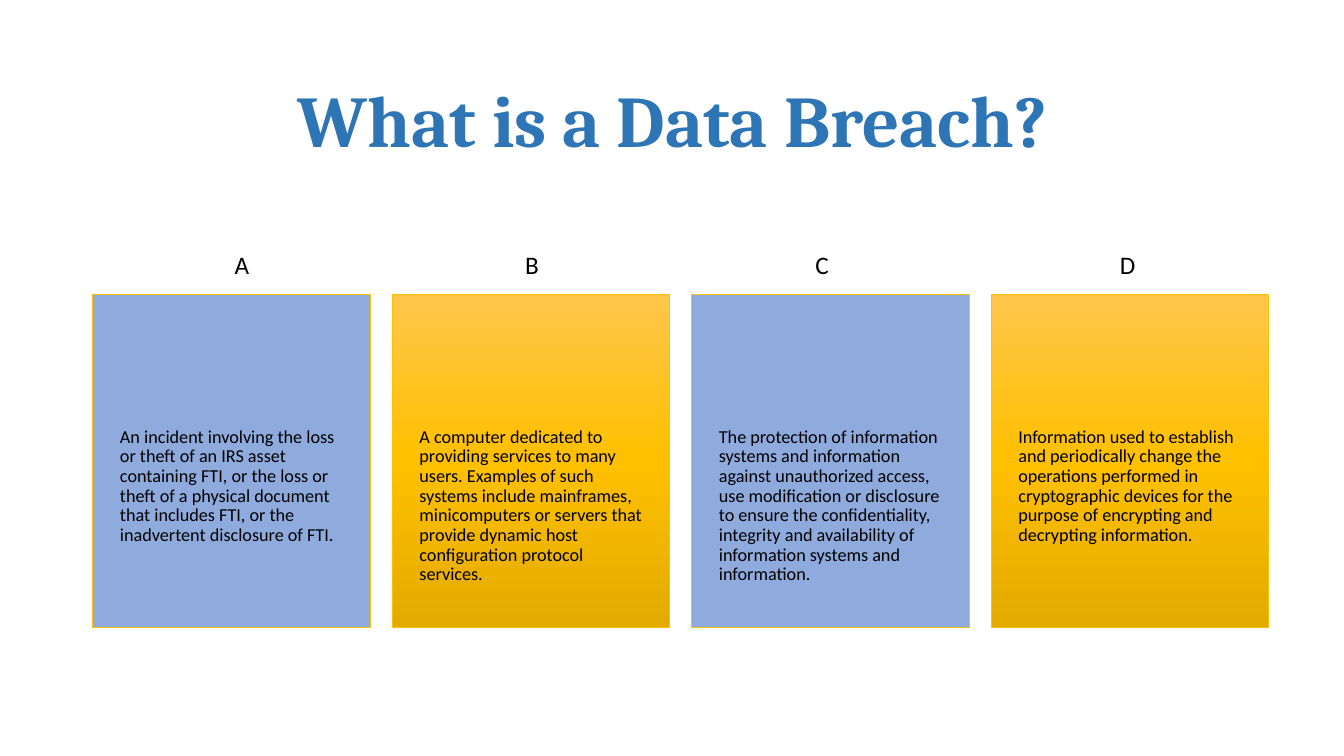
import copy
import dataclasses
import pptx
import pptx.util
import pptx.dml.color
import pptx.enum.shapes
import pptx.enum.text
import pptx.oxml.ns

Inches = pptx.util.Inches
Align = pptx.enum.text.PP_ALIGN
Anchor = pptx.enum.text.MSO_ANCHOR


@dataclasses.dataclass(frozen=True)
class Theme:
    title: str = "2E75B6"
    ink: str = "000000"
    blue: str = "8FAADC"
    gold: str = "FFC000"
    shades: tuple = ((0, "FFC64B"), (0.5, "FFC000"), (1, "E3AB00"))
    head: str = "Cambria"
    body: str = "Calibri"
    large: int = 52
    label: int = 18
    small: int = 13


THEME = Theme()

CARDS = [
    ("A", 1.31, "An incident involving the loss or theft of an IRS asset containing FTI, or the loss or theft of a physical document that includes FTI, or the inadvertent disclosure of FTI."),
    ("B", 1.22, "A computer dedicated to providing services to many users. Examples of such systems include mainframes, minicomputers or servers that provide dynamic host configuration protocol services."),
    ("C", 1.13, "The protection of information systems and information against unauthorized access, use modification or disclosure to ensure the confidentiality, integrity and availability of information systems and information."),
    ("D", 1.18, "Information used to establish and periodically change the operations performed in cryptographic devices for the purpose of encrypting and decrypting information."),
]


def tint(code):
    return pptx.dml.color.RGBColor.from_string(code)


def write(slide, text, box, size, font=THEME.body, color=THEME.ink, bold=False,
          align=Align.LEFT, anchor=Anchor.TOP, inset=(0.1, 0.05, 0.1, 0.05), lead=1.0):
    frame = slide.shapes.add_textbox(*map(Inches, box)).text_frame
    frame.word_wrap = True
    frame.vertical_anchor = anchor
    frame.margin_left, frame.margin_top, frame.margin_right, frame.margin_bottom = map(Inches, inset)
    para = frame.paragraphs[0]
    para.alignment = align
    para.line_spacing = lead
    run = para.add_run()
    run.text = text
    run.font.size = pptx.util.Pt(size)
    run.font.name = font
    run.font.bold = bold
    run.font.color.rgb = tint(color)


def shade(shape):
    shape.fill.gradient()
    shape.fill.gradient_angle = 270
    stops = shape.element.spPr.find(".//" + pptx.oxml.ns.qn("a:gsLst"))
    stops.insert(1, copy.deepcopy(stops[0]))
    for stop, (place, code) in zip(shape.fill.gradient_stops, THEME.shades):
        stop.position = place
        stop.color.rgb = tint(code)


def add_title(slide, box):
    write(slide, "What is a Data Breach?", box, THEME.large, font=THEME.head,
          color=THEME.title, bold=True, align=Align.CENTER, anchor=Anchor.MIDDLE, lead=0.9)


def add_card(slide, box, name, shift, text, golden):
    left, top, width, height = box
    card = slide.shapes.add_shape(pptx.enum.shapes.MSO_SHAPE.RECTANGLE, *map(Inches, box))
    card.shadow.inherit = False
    if golden:
        shade(card)
    else:
        card.fill.solid()
        card.fill.fore_color.rgb = tint(THEME.blue)
    card.line.color.rgb = tint(THEME.gold)
    card.line.width = pptx.util.Pt(0.5)
    drop = height * 0.4
    write(slide, text, (left, top + drop, width, height - drop), THEME.small,
          inset=(0.27, 0, 0.27, 0.36), lead=0.9)
    write(slide, name, (left + shift, top - 0.5, 1, 0.4), THEME.label)


def add_cards(slide, box):
    left, top, width, height = box
    wide = 2.75
    step = (width - wide) / (len(CARDS) - 1)
    for i, (name, shift, text) in enumerate(CARDS):
        add_card(slide, (left + i * step, top, wide, height), name, shift, text, i % 2 == 1)


def main():
    deck = pptx.Presentation()
    deck.slide_width, deck.slide_height = Inches(13.33), Inches(7.5)
    slide = deck.slides.add_slide(deck.slide_layouts[6])
    add_title(slide, (0.92, 0.61, 11.5, 1.24))
    add_cards(slide, (0.92, 2.92, 11.66, 3.3))
    deck.save("out.pptx")


if __name__ == "__main__":
    main()
